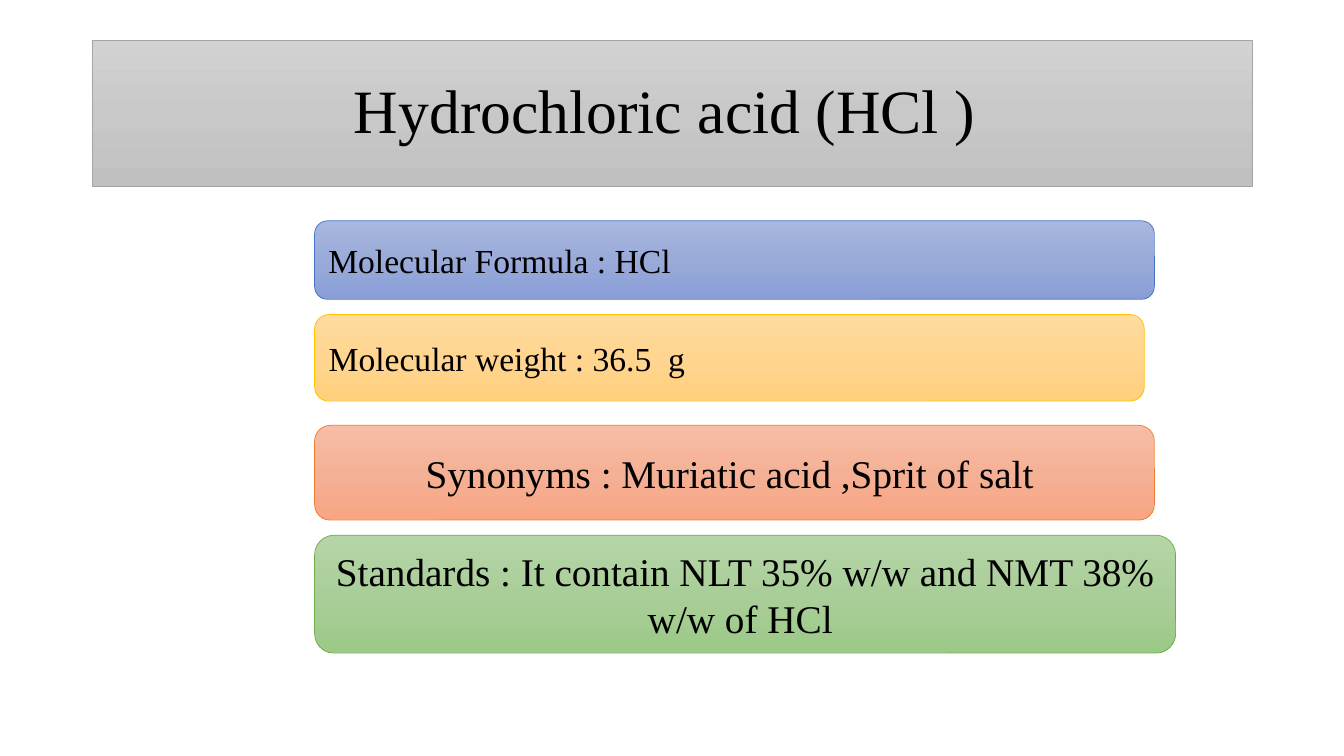
"""Build a slide that lists the key facts about hydrochloric acid."""
from copy import deepcopy

from pptx import Presentation
from pptx.dml.color import RGBColor
from pptx.enum.shapes import MSO_SHAPE as Shape
from pptx.enum.text import MSO_ANCHOR as Anchor, PP_ALIGN as Align
from pptx.oxml.ns import qn
from pptx.util import Emu, Pt

PX = 9144
FONT = "Times New Roman"
CARD_LEFT = 312
COLOURS = {
    "text": "000000",
    "grey": ("D2D2D2", "C8C8C8", "C0C0C0", "A5A5A5"),
    "blue": ("A8B7DF", "9AABD9", "889ED7", "4472C4"),
    "gold": ("FFDB9E", "FFD590", "FFD07C", "FFC000"),
    "orange": ("F7BDA5", "F5B196", "F8A582", "ED7D31"),
    "green": ("B5D5A7", "AACE9A", "9CC987", "70AD47"),
}
CARDS = [
    (219, 833, 78, "blue", "Molecular Formula : HCl", 24, Align.LEFT),
    (312, 823, 86, "gold", "Molecular weight : 36.5  g", 24, Align.LEFT),
    (422, 833, 94, "orange", "Synonyms : Muriatic acid ,Sprit of salt ", 28, Align.CENTER),
    (531, 854, 117, "green",
     "Standards : It contain NLT 35% w/w and NMT 38% w/w of HCl ", 28, Align.CENTER),
]


def px(value):
    return Emu(value * PX)


def paint(shape, colour):
    *stop_colours, line_colour = COLOURS[colour]
    shape.shadow.inherit = False
    shape.fill.gradient()
    shape.fill.gradient_angle = 270
    stop_list = next(shape._element.iter(qn("a:gsLst")))
    stop_list.insert(1, deepcopy(stop_list[0]))
    for index, stop in enumerate(shape.fill.gradient_stops):
        stop.position = index / 2
        stop.color.rgb = RGBColor.from_string(stop_colours[index])
    shape.line.color.rgb = RGBColor.from_string(line_colour)
    shape.line.width = Pt(0.5)


def write(shape, text, size, alignment):
    frame = shape.text_frame
    frame.word_wrap = True
    frame.vertical_anchor = Anchor.MIDDLE
    paragraph = frame.paragraphs[0]
    paragraph.alignment = alignment
    run = paragraph.add_run()
    run.text = text
    run.font.name = FONT
    run.font.size = Pt(size)
    run.font.color.rgb = RGBColor.from_string(COLOURS["text"])
    return paragraph


def add_title(slide, text):
    title = slide.shapes.title
    title.left, title.top, title.width, title.height = map(px, (92, 40, 1150, 145))
    paint(title, "grey")
    write(title, text, 44, Align.CENTER).line_spacing = 0.9


def add_card(slide, top, width, height, colour, text, size, alignment):
    card = slide.shapes.add_shape(
        Shape.ROUNDED_RECTANGLE, px(CARD_LEFT), px(top), px(width), px(height))
    paint(card, colour)
    write(card, text, size, alignment)


def main():
    presentation = Presentation()
    presentation.slide_width, presentation.slide_height = px(1333), px(750)
    slide = presentation.slides.add_slide(presentation.slide_layouts[5])
    add_title(slide, "Hydrochloric acid (HCl ) ")
    for card in CARDS:
        add_card(slide, *card)
    presentation.save("out.pptx")


if __name__ == "__main__":
    main()
